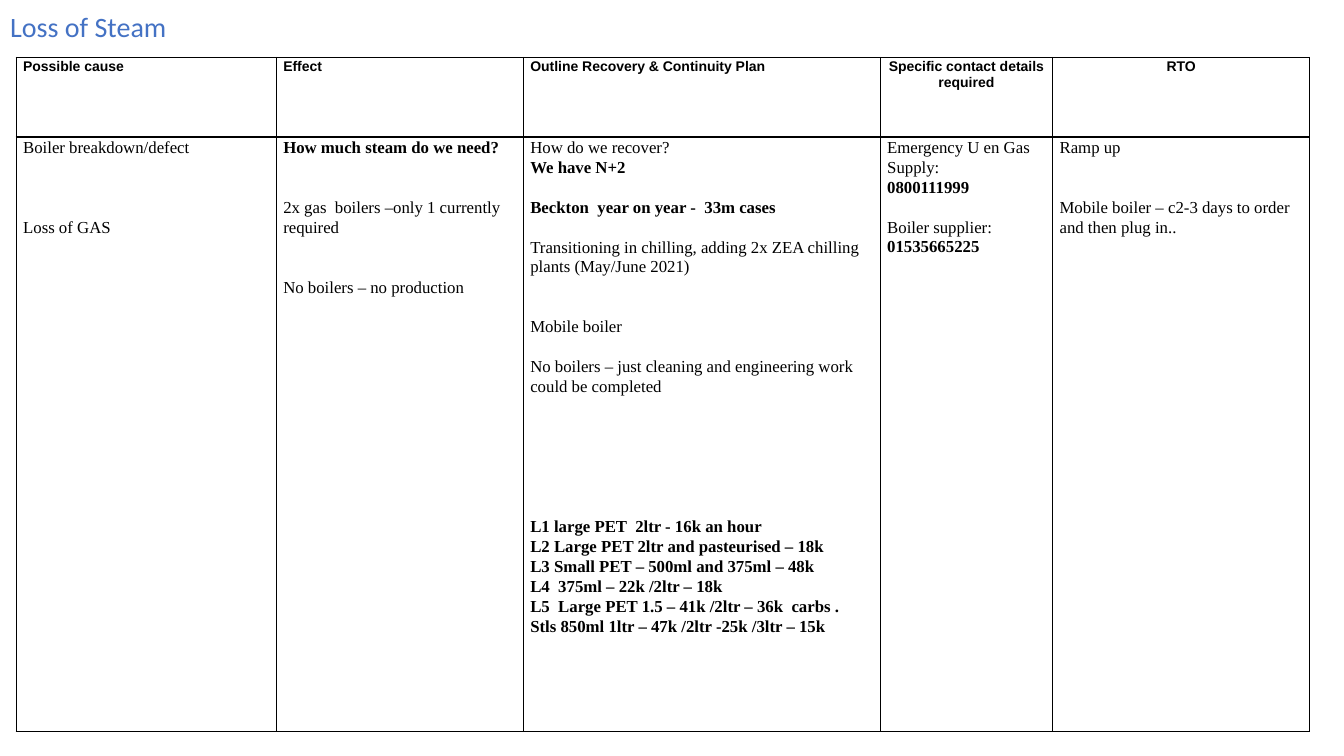
from lxml import etree
from pptx import Presentation
from pptx.dml.color import RGBColor as Rgb
from pptx.enum.text import MSO_ANCHOR as Anchor, PP_ALIGN as Align
from pptx.oxml.ns import qn
from pptx.util import Inches, Pt

LINE = 14.28  # height of one body line, in points
HEAD = dict(size=Pt(10), name="Arial", bold=True)
BODY = dict(size=Pt(12), name="Times New Roman")


def paint(font, tint, look):
    for key, val in look.items():
        setattr(font, key, val)
    font.color.rgb = Rgb.from_string(tint)


def fill(cell, lines, look, align=Align.LEFT):
    """Write (blank lines above, bold, text) items and rule the cell."""
    cell.margin_left = cell.margin_right = Inches(0.07)
    cell.margin_top = cell.margin_bottom = 0
    cell.vertical_anchor = Anchor.TOP
    cell.fill.background()
    for i, (gap, bold, text) in enumerate(lines):
        par = cell.text_frame.paragraphs[0] if i == 0 else cell.text_frame.add_paragraph()
        par.alignment = align
        par.line_spacing = 1.07
        par.space_before = Pt(gap * LINE)
        run = par.add_run()
        run.text = text
        paint(run.font, "000000", {**look, "bold": bold})
    props = cell._tc.get_or_add_tcPr()
    for i, side in enumerate(("lnL", "lnR", "lnT", "lnB")):
        edge = etree.Element(qn("a:" + side), w=str(Pt(1)))
        ink = etree.SubElement(edge, qn("a:solidFill"))
        etree.SubElement(ink, qn("a:srgbClr"), val="000000")
        props.insert(i, edge)


deck = Presentation()
deck.slide_width, deck.slide_height = Inches(13.33), Inches(7.5)
slide = deck.slides.add_slide(deck.slide_layouts[5])

# Title
title = slide.shapes.title
title.left, title.top = 0, 0
title.width, title.height = Inches(11.5), Inches(0.57)
title.text_frame.text = "Loss of Steam"
title.text_frame.vertical_anchor = Anchor.MIDDLE
par = title.text_frame.paragraphs[0]
par.alignment = Align.LEFT
par.line_spacing = 0.9
paint(par.runs[0].font, "4472C4", dict(size=Pt(20), name="Calibri"))

# Columns: width, heading, heading alignment, body lines
cols = [
    (2.58, "Possible cause", Align.LEFT, [
        (0, False, "Boiler breakdown/defect"),
        (3, False, "Loss of GAS")]),
    (2.45, "Effect", Align.LEFT, [
        (0, True, "How much steam do we need?"),
        (2, False, "2x gas  boilers –only 1 currently required"),
        (2, False, "No boilers – no production")]),
    (3.54, "Outline Recovery & Continuity Plan", Align.LEFT, [
        (0, False, "How do we recover?"),
        (0, True, "We have N+2"),
        (1, True, "Beckton  year on year -  33m cases"),
        (1, False, "Transitioning in chilling, adding 2x ZEA chilling plants (May/June 2021)"),
        (2, False, "Mobile boiler"),
        (1, False, "No boilers – just cleaning and engineering work could be completed"),
        (6, True, "L1 large PET  2ltr - 16k an hour"),
        (0, True, "L2 Large PET 2ltr and pasteurised – 18k"),
        (0, True, "L3 Small PET – 500ml and 375ml – 48k"),
        (0, True, "L4  375ml – 22k /2ltr – 18k"),
        (0, True, "L5  Large PET 1.5 – 41k /2ltr – 36k  carbs .  "
                  "Stls 850ml 1ltr – 47k /2ltr -25k /3ltr – 15k")]),
    (1.71, "Specific contact details required", Align.CENTER, [
        (0, False, "Emergency U en Gas Supply:"),
        (0, True, "0800111999"),
        (1, False, "Boiler supplier:"),
        (0, True, "01535665225")]),
    (2.55, "RTO", Align.CENTER, [
        (0, False, "Ramp up"),
        (2, False, "Mobile boiler – c2-3 days to order and then plug in..")]),
]

# Table
wide = sum(col[0] for col in cols)
table = slide.shapes.add_table(2, len(cols), Inches(0.16), Inches(0.57),
                               Inches(wide), Inches(6.69)).table
table.first_row = table.horz_banding = False
for row, tall in zip(table.rows, (0.79, 5.9)):
    row.height = Inches(tall)
for i, (width, head, align, lines) in enumerate(cols):
    table.columns[i].width = Inches(width)
    fill(table.cell(0, i), [(0, True, head)], HEAD, align)
    fill(table.cell(1, i), lines, BODY)

deck.save("out.pptx")
